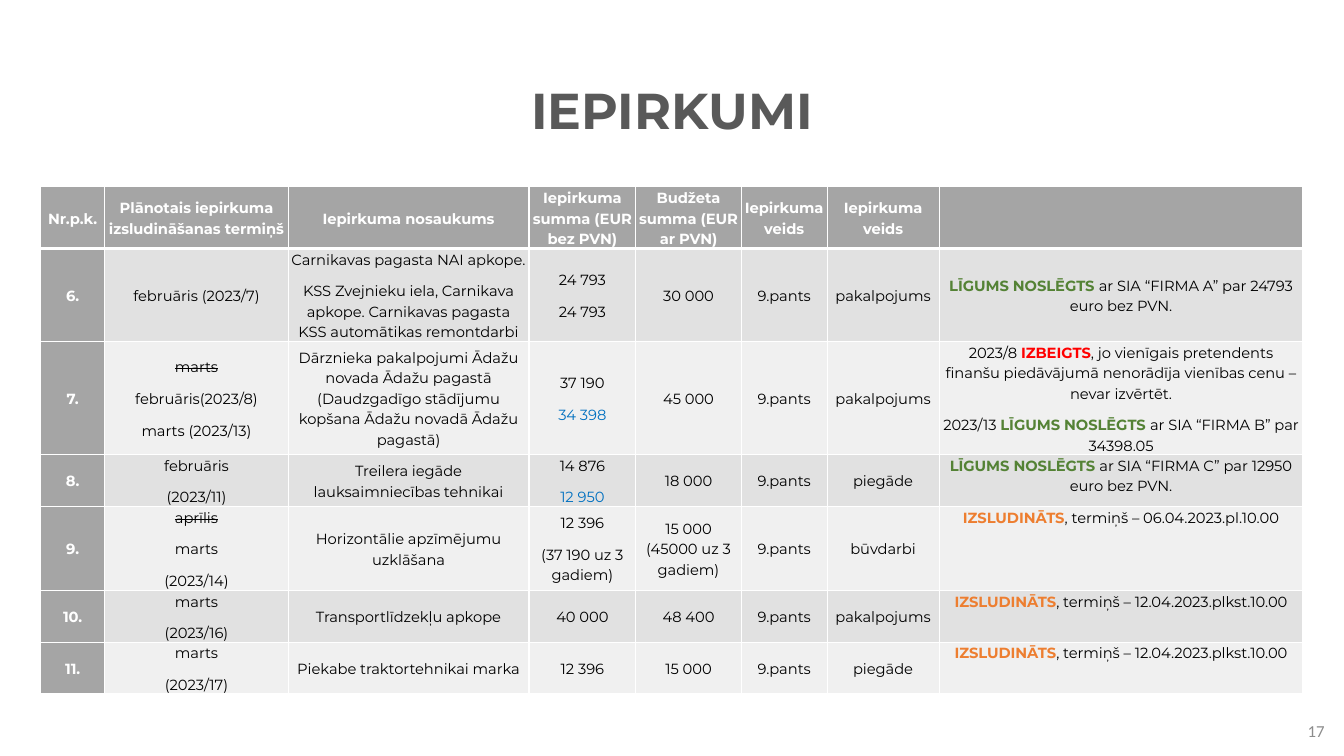
from dataclasses import dataclass

from lxml.etree import SubElement
from pptx import Presentation
from pptx.dml.color import RGBColor
from pptx.enum.text import MSO_ANCHOR, PP_ALIGN
from pptx.oxml.ns import qn
from pptx.util import Pt


@dataclass(frozen=True)
class Theme:
    """Colours, fonts and type sizes of the slide."""
    title: str = "595959"
    number: str = "8C8C8C"
    head: str = "A5A5A5"
    bands: tuple = ("E1E1E1", "F0F0F0")
    white: str = "FFFFFF"
    black: str = "000000"
    signed: str = "548235"
    ended: str = "FF0000"
    announced: str = "ED7E30"
    revised: str = "0070C0"
    font: str = "Montserrat"
    number_font: str = "Calibri"
    title_size: float = 36
    table_size: float = 10.5
    number_size: float = 12


THEME = Theme()

STYLES = {
    "head": (THEME.white, True, False),
    "plain": (THEME.black, False, False),
    "struck": (THEME.black, False, True),
    "revised": (THEME.revised, False, False),
    "signed": (THEME.signed, True, False),
    "ended": (THEME.ended, True, False),
    "announced": (THEME.announced, True, False),
}

SIGNED = ("LĪGUMS NOSLĒGTS ", "signed")
ENDED = ("IZBEIGTS", "ended")
ANNOUNCED = ("IZSLUDINĀTS", "announced")

COLUMNS = [46, 131, 172, 76.3, 75.4, 61.3, 80, 260]
HEIGHTS = [44.3, 66.4, 80.7, 37.1, 60, 37.1, 37.1]
HEADINGS = ["Nr.p.k.", "Plānotais iepirkuma izsludināšanas termiņš", "Iepirkuma nosaukums",
            "Iepirkuma summa (EUR bez PVN)", "Budžeta summa (EUR ar PVN)",
            "Iepirkuma veids", "Iepirkuma veids", ""]
PROCUREMENTS = [
    ["6.", "februāris (2023/7)",
     ["Carnikavas pagasta NAI apkope.",
      "KSS Zvejnieku iela, Carnikava apkope. Carnikavas pagasta KSS automātikas remontdarbi"],
     ["24 793", "24 793"], "30 000", "9.pants", "pakalpojums",
     [[SIGNED, "ar SIA “FIRMA A” par 24793 euro bez PVN."]]],
    ["7.", [[("marts", "struck")], "februāris(2023/8)", "marts (2023/13)"],
     "Dārznieka pakalpojumi Ādažu novada Ādažu pagastā (Daudzgadīgo stādījumu kopšana "
     "Ādažu novadā Ādažu pagastā)",
     ["37 190", [("34 398", "revised")]], "45 000", "9.pants", "pakalpojums",
     [["2023/8 ", ENDED, ", jo vienīgais pretendents finanšu piedāvājumā nenorādīja "
       "vienības cenu – nevar izvērtēt."],
      ["2023/13 ", SIGNED, "ar SIA “FIRMA B” par 34398.05"]]],
    ["8.", ["februāris", "(2023/11)"], "Treilera iegāde lauksaimniecības tehnikai",
     ["14 876", [("12 950", "revised")]], "18 000", "9.pants", "piegāde",
     [[SIGNED, "ar SIA “FIRMA C” par 12950 euro bez PVN."]]],
    ["9.", [[("aprīlis", "struck")], "marts", "(2023/14)"], "Horizontālie apzīmējumu uzklāšana",
     ["12 396", "(37 190 uz 3 gadiem)"], "15 000 (45000 uz 3 gadiem)", "9.pants", "būvdarbi",
     [[ANNOUNCED, ", termiņš – 06.04.2023.pl.10.00"]]],
    ["10.", ["marts", "(2023/16)"], "Transportlīdzekļu apkope",
     "40 000", "48 400", "9.pants", "pakalpojums",
     [[ANNOUNCED, ", termiņš – 12.04.2023.plkst.10.00"]]],
    ["11.", ["marts", "(2023/17)"], "Piekabe traktortehnikai marka",
     "12 396", "15 000", "9.pants", "piegāde",
     [[ANNOUNCED, ", termiņš – 12.04.2023.plkst.10.00"]]],
]


def format_font(font, name, size, color, bold=False):
    """Set the typeface, size, colour and weight of a font."""
    font.name, font.size, font.bold = name, Pt(size), bold
    font.color.rgb = RGBColor.from_string(color)


def add_label(slide, box, text, align, name, size, color, bold=False):
    """Place one line of text, centred vertically in its box."""
    tf = slide.shapes.add_textbox(*map(Pt, box)).text_frame
    tf.word_wrap = True
    tf.vertical_anchor = MSO_ANCHOR.MIDDLE
    tf.text = text
    p = tf.paragraphs[0]
    p.alignment = align
    p.line_spacing = 0.9
    format_font(p.runs[0].font, name, size, color, bold)


def set_borders(cell, top, bottom):
    """Draw white borders of the given top and bottom widths round a cell."""
    tcPr = cell._tc.get_or_add_tcPr()
    widths = {"a:lnL": 1, "a:lnR": 1, "a:lnT": top, "a:lnB": bottom}
    for i, (tag, width) in enumerate(widths.items()):
        ln = SubElement(tcPr, qn(tag), w=str(Pt(width)))
        fill = SubElement(ln, qn("a:solidFill"))
        SubElement(fill, qn("a:srgbClr"), val=THEME.white)
        tcPr.insert(i, ln)


def fill_cell(cell, content, default):
    """Write the paragraphs and styled runs of a table cell."""
    tf = cell.text_frame
    paragraphs = [content] if isinstance(content, str) else content
    for i, runs in enumerate(paragraphs):
        p = tf.add_paragraph() if i else tf.paragraphs[0]
        p.alignment = PP_ALIGN.CENTER
        p.line_spacing = 1.15
        p.space_after = Pt(8)
        p.font.size = Pt(THEME.table_size)
        for run in [runs] if isinstance(runs, str) else runs:
            text, style = (run, default) if isinstance(run, str) else run
            color, bold, struck = STYLES[style]
            r = p.add_run()
            r.text = text
            format_font(r.font, THEME.font, THEME.table_size, color, bold)
            if struck:
                r.font._element.set("strike", "sngStrike")


def add_procurements(slide, box):
    """Place the procurement table in its box."""
    rows = [HEADINGS] + PROCUREMENTS
    table = slide.shapes.add_table(len(rows), len(COLUMNS), *map(Pt, box)).table
    for column, width in zip(table.columns, COLUMNS):
        column.width = Pt(width)
    for i, (row, height, contents) in enumerate(zip(table.rows, HEIGHTS, rows)):
        row.height = Pt(height)
        for j, (cell, content) in enumerate(zip(row.cells, contents)):
            heading = i == 0 or j == 0
            wide = i > 2 or (i > 0 and j == 0)
            at_top = i > 2 and j == len(COLUMNS) - 1
            cell.margin_left = cell.margin_right = Pt(5 if wide else 2)
            cell.margin_top = cell.margin_bottom = 0
            cell.vertical_anchor = MSO_ANCHOR.TOP if at_top else MSO_ANCHOR.MIDDLE
            cell.fill.solid()
            color = THEME.head if heading else THEME.bands[(i - 1) % 2]
            cell.fill.fore_color.rgb = RGBColor.from_string(color)
            set_borders(cell, 3 if i == 1 else 1, 3 if i == 0 else 1)
            fill_cell(cell, content, "head" if heading else "plain")


def main():
    """Build the procurement slide and save it."""
    prs = Presentation()
    prs.slide_width, prs.slide_height = Pt(960), Pt(540)
    slide = prs.slides.add_slide(prs.slide_layouts[6])
    add_label(slide, (66, 28.75, 828, 104.4), "IEPIRKUMI", PP_ALIGN.CENTER,
              THEME.font, THEME.title_size, THEME.title, True)
    add_procurements(slide, (28.9, 133.2, sum(COLUMNS), sum(HEIGHTS)))
    add_label(slide, (737.3, 508.3, 216, 28.8), "17", PP_ALIGN.RIGHT,
              THEME.number_font, THEME.number_size, THEME.number)
    prs.save("out.pptx")


if __name__ == "__main__":
    main()
